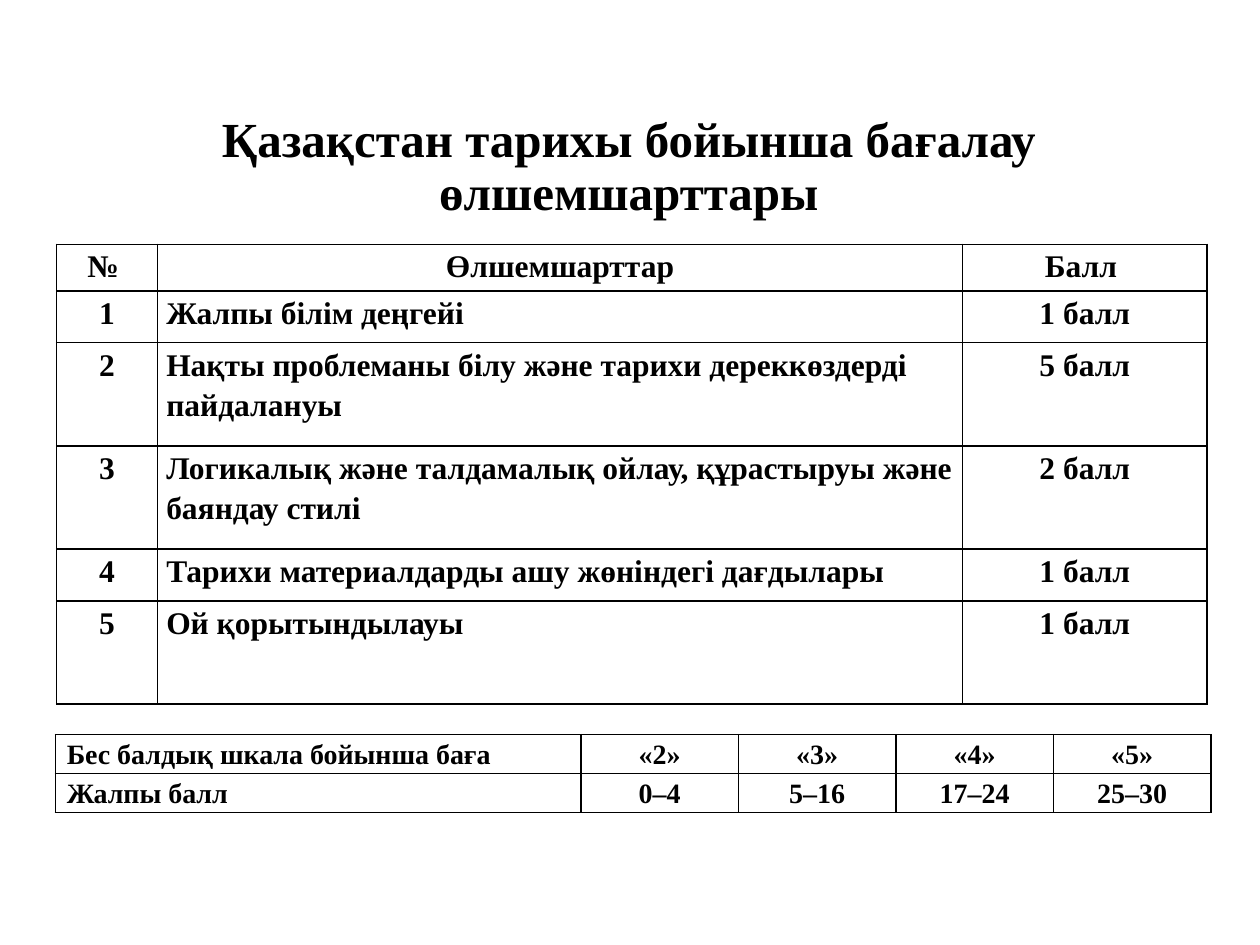
from lxml.etree import SubElement as Sub
from pptx import Presentation
from pptx.dml.color import RGBColor
from pptx.enum.text import MSO_ANCHOR, PP_ALIGN
from pptx.oxml.ns import qn
from pptx.util import Inches, Pt

FONT = "Times New Roman"
COLORS = {"ink": "000000", "paper": "FFFFFF"}
TITLE = "Қазақстан тарихы бойынша бағалау өлшемшарттары"
UNIT = 0.41  # height of one line in the criteria table

CRITERIA = {
    "rows": [
        ("№ ", "Өлшемшарттар", "Балл "),
        ("1", "Жалпы білім деңгейі", "1 балл"),
        ("2", "Нақты проблеманы білу және тарихи дереккөздерді\nпайдалануы", "5 балл"),
        ("3", "Логикалық және талдамалық ойлау, құрастыруы және баяндау стилі", "2 балл"),
        ("4", "Тарихи материалдарды ашу жөніндегі дағдылары", "1 балл"),
        ("5", "Ой қорытындылауы", "1 балл"),
    ],
    "at": (0.45, 1.94),
    "cols": [0.8, 6.39, 1.94],
    "heights": [0.37, UNIT, 2 * UNIT, 2 * UNIT, UNIT, 2 * UNIT],
    "size": 18,
    "pads": [0.07, 0.07, 0.07],
    "left": lambda row, col: row > 0 and col == 1,
}
SCALE = {
    "rows": [
        ("Бес балдық шкала бойынша баға", "«2»", "«3»", "«4»", "«5»"),
        ("Жалпы балл", "0–4", "5–16", "17–24", "25–30"),
    ],
    "at": (0.44, 5.83),
    "cols": [4.17] + [1.25] * 4,
    "heights": [0.31] * 2,
    "size": 16,
    "pads": [0.09] + [0] * 4,
    "left": lambda row, col: col == 0,
}


def style(para, size, align, gap):
    para.alignment = align
    para.line_spacing = gap
    font = para.font
    font.name, font.size, font.bold = FONT, Pt(size), True
    font.color.rgb = RGBColor.from_string(COLORS["ink"])


def frame(cell):
    """Give the cell a thin line on each side; sides must precede its fill."""
    props = cell._tc.get_or_add_tcPr()
    for side in ("a:lnL", "a:lnR", "a:lnT", "a:lnB"):
        line = Sub(props, qn(side), w=str(Pt(1)))
        fill = Sub(line, qn("a:solidFill"))
        Sub(fill, qn("a:srgbClr"), val=COLORS["ink"])


def add_grid(slide, data):
    rows, cols, heights = data["rows"], data["cols"], data["heights"]
    box = [Inches(n) for n in (*data["at"], sum(cols), sum(heights))]
    table = slide.shapes.add_table(len(rows), len(cols), *box).table
    for col, width in zip(table.columns, cols):
        col.width = Inches(width)
    for row, height in zip(table.rows, heights):
        row.height = Inches(height)
    for r, texts in enumerate(rows):
        for c, text in enumerate(texts):
            cell = table.cell(r, c)
            cell.text = text
            cell.margin_left = cell.margin_right = Inches(data["pads"][c])
            cell.margin_top = cell.margin_bottom = 0
            frame(cell)
            cell.fill.solid()
            cell.fill.fore_color.rgb = RGBColor.from_string(COLORS["paper"])
            align = PP_ALIGN.LEFT if data["left"](r, c) else PP_ALIGN.CENTER
            for para in cell.text_frame.paragraphs:
                style(para, data["size"], align, 1.15)


def add_title(slide):
    box = slide.shapes.add_textbox(*[Inches(n) for n in (0.47, 0.86, 9.04, 0.95)])
    text = box.text_frame
    text.word_wrap = True
    text.vertical_anchor = MSO_ANCHOR.MIDDLE
    text.text = TITLE
    para = text.paragraphs[0]
    style(para, 28, PP_ALIGN.CENTER, 0.9)
    para.space_before = Pt(10)


def main():
    deck = Presentation()
    deck.slide_width, deck.slide_height = Inches(10), Inches(7.5)
    slide = deck.slides.add_slide(deck.slide_layouts[6])
    add_title(slide)
    for data in (CRITERIA, SCALE):
        add_grid(slide, data)
    deck.save("out.pptx")


if __name__ == "__main__":
    main()
